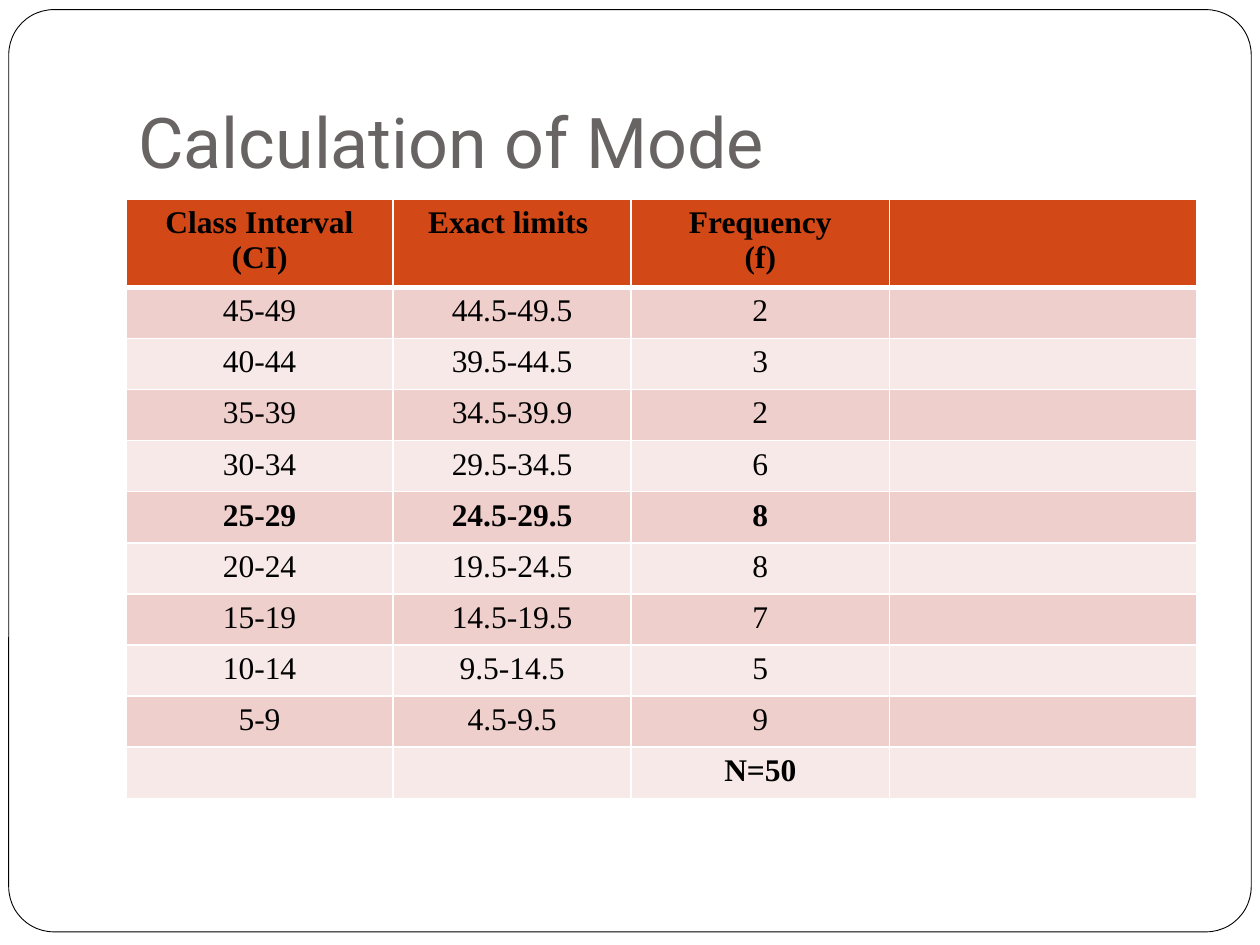
from lxml.etree import SubElement
from pptx import Presentation
from pptx.dml.color import RGBColor as Color
from pptx.enum.shapes import MSO_SHAPE as Shape
from pptx.enum.text import MSO_ANCHOR as Anchor, PP_ALIGN as Align
from pptx.oxml.ns import qn
from pptx.util import Pt

TITLE = "Calculation of Mode"
HEADER = [["Class Interval (CI)"], ["Exact limits "], ["Frequency", "(f)"], []]
INTERVALS = [
    ("45-49", "44.5-49.5", "2"),
    ("40-44", "39.5-44.5", "3"),
    ("35-39", "34.5-39.9", "2"),
    ("30-34", "29.5-34.5", "6"),
    ("25-29", "24.5-29.5", "8"),
    ("20-24", "19.5-24.5", "8"),
    ("15-19", "14.5-19.5", "7"),
    ("10-14", "9.5-14.5", "5"),
    ("5-9", "4.5-9.5", "9"),
]
TOTAL = [[], [], ["N=50"], []]
MODAL_INTERVAL = "25-29"

COLORS = {
    "white": "FFFFFF",
    "black": "000000",
    "title": "696464",
    "header": "D34817",
    "odd": "EFCFCC",
    "even": "F7E9E8",
}
COLUMN_WIDTHS = [152.64, 136.08, 147.6, 175.68]
HEADER_HEIGHT = 46.8
ROW_HEIGHT = 29.2


def color(name):
    return Color.from_string(COLORS[name])


def add_run(paragraph, text, font, size, color_name, bold=False):
    run = paragraph.add_run()
    run.text = text
    run.font.name = font
    run.font.size = Pt(size)
    run.font.bold = bold
    run.font.color.rgb = color(color_name)


def add_frame(slide):
    frame = slide.shapes.add_shape(Shape.ROUNDED_RECTANGLE, Pt(5), Pt(5.5), Pt(710), Pt(527))
    frame.adjustments[0] = 0.049
    frame.shadow.inherit = False
    frame.fill.solid()
    frame.fill.fore_color.rgb = color("white")
    frame.line.color.rgb = color("black")
    frame.line.width = Pt(0.5)


def add_title(slide):
    box = slide.shapes.add_textbox(Pt(72), Pt(21.6), Pt(612), Pt(90))
    text_frame = box.text_frame
    text_frame.word_wrap = True
    text_frame.vertical_anchor = Anchor.BOTTOM
    text_frame.margin_bottom = Pt(7.2)
    add_run(text_frame.paragraphs[0], TITLE, "Roboto", 40, "title")


def set_borders(cell, bottom_width):
    properties = cell._tc.get_or_add_tcPr()
    for side, width in (("L", 1), ("R", 1), ("T", 1), ("B", bottom_width)):
        line = SubElement(properties, qn(f"a:ln{side}"), w=str(Pt(width)))
        fill = SubElement(line, qn("a:solidFill"))
        SubElement(fill, qn("a:srgbClr"), val=COLORS["white"])


def fill_cell(cell, lines, fill_name, bold, bottom_width):
    set_borders(cell, bottom_width)
    cell.fill.solid()
    cell.fill.fore_color.rgb = color(fill_name)
    text_frame = cell.text_frame
    for index, line in enumerate(lines):
        paragraph = text_frame.add_paragraph() if index else text_frame.paragraphs[0]
        paragraph.alignment = Align.CENTER
        add_run(paragraph, line, "Times New Roman", 18, "black", bold)


def add_frequency_table(slide):
    body = [[[text] for text in interval] + [[]] for interval in INTERVALS]
    rows = [HEADER, *body, TOTAL]
    heights = [HEADER_HEIGHT] + [ROW_HEIGHT] * (len(rows) - 1)
    table = slide.shapes.add_table(
        len(rows), len(COLUMN_WIDTHS), Pt(72), Pt(113.76),
        Pt(sum(COLUMN_WIDTHS)), Pt(sum(heights)),
    ).table
    for column, width in zip(table.columns, COLUMN_WIDTHS):
        column.width = Pt(width)
    for index, (cells, height) in enumerate(zip(rows, heights)):
        table.rows[index].height = Pt(height)
        is_header = index == 0
        fill_name = "header" if is_header else "odd" if index % 2 else "even"
        bold = is_header or cells is TOTAL or cells[0] == [MODAL_INTERVAL]
        for column, lines in enumerate(cells):
            fill_cell(table.cell(index, column), lines, fill_name, bold, 3 if is_header else 1)


def main():
    presentation = Presentation()
    presentation.slide_width = Pt(720)
    presentation.slide_height = Pt(540)
    slide = presentation.slides.add_slide(presentation.slide_layouts[6])
    add_frame(slide)
    add_title(slide)
    add_frequency_table(slide)
    presentation.save("out.pptx")


if __name__ == "__main__":
    main()
